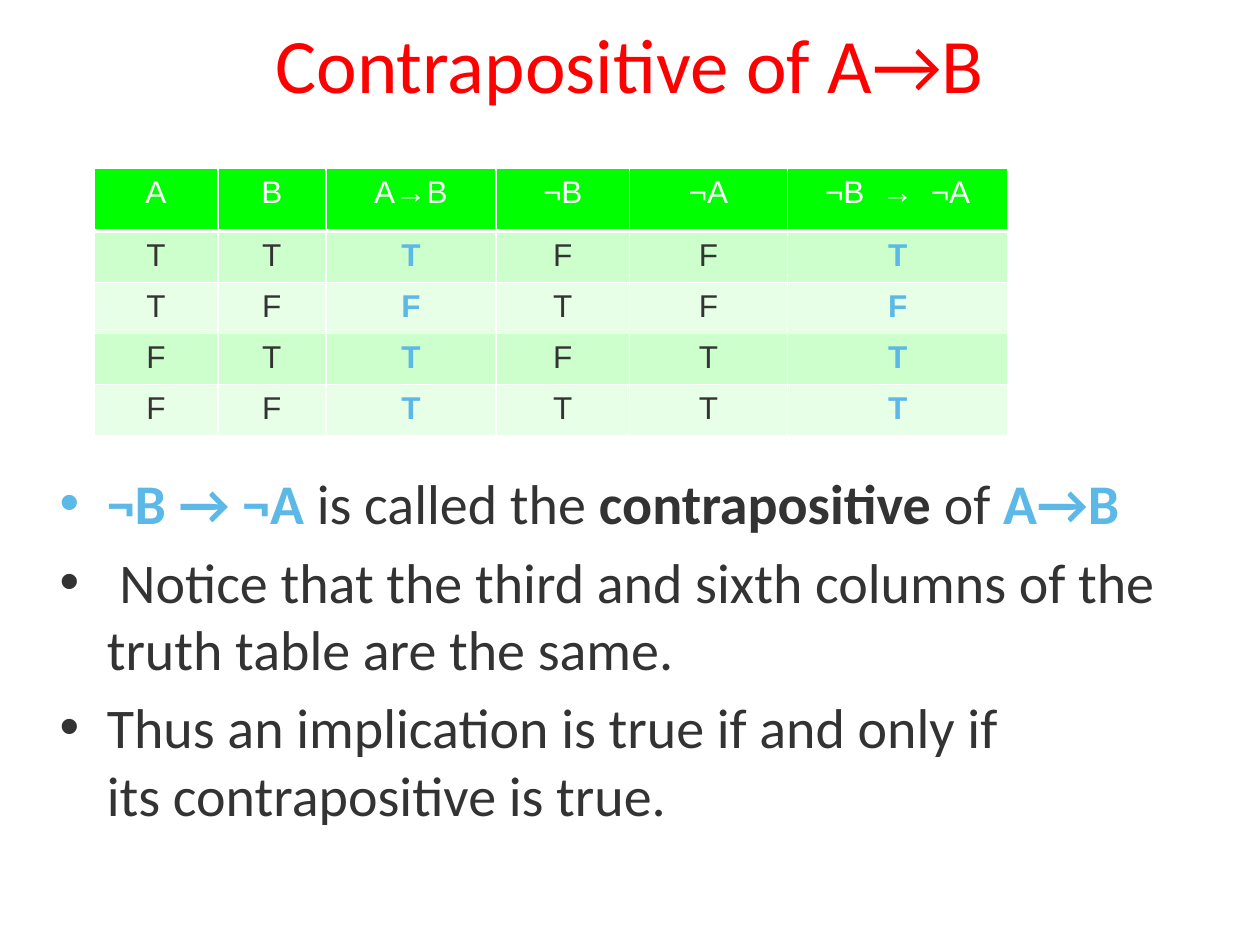
from lxml import etree
from pptx import Presentation
from pptx import util as u
from pptx.dml.color import RGBColor
from pptx.enum import text
from pptx.oxml import ns

DARK, BLUE, WHITE = "333333", "5CB9E7", "FFFFFF"
HEADER_FILL, BAND_FILLS = "00FF00", ("CCFFCC", "E7FFE7")
COLUMN_WIDTHS = (2.49, 2.18, 3.43, 2.69, 3.18, 4.45)
ROW_HEIGHTS = (1.27, 1.03, 1.03, 1.03, 1.03)
RESULT_COLUMNS = (2, 5)
TRUTH_TABLE = (
    ("A", "B", "A→B", "¬B", "¬A", "¬B  →  ¬A"),
    "TTTFFT",
    "TFFTFF",
    "FTTFTT",
    "FFTTTT",
)
BULLETS = (
    (
        ("¬B → ¬A ", BLUE, True),
        ("is called the ", DARK, False),
        ("contrapositive", DARK, True),
        (" of ", DARK, False),
        ("A→B", BLUE, True),
    ),
    ((" Notice that the third and sixth columns of the truth table are the same.", DARK, False),),
    (("Thus an implication is true if and only if \nits contrapositive is true.", DARK, False),),
)


def color(value):
    """Turn a hex string into a colour."""
    return RGBColor.from_string(value)


def add_text(paragraph, content, size=18, font="Arial", fill=DARK, bold=False):
    """Add formatted text, with a line break at each newline."""
    for index, line in enumerate(content.split("\n")):
        if index:
            paragraph.add_line_break()
        run = paragraph.add_run()
        run.text = line
        run.font.size = u.Pt(size)
        run.font.name = font
        run.font.bold = bold
        run.font.color.rgb = color(fill)


def place(shape, left, top, width, height):
    """Move and size a shape, in centimetres."""
    shape.left, shape.top = u.Cm(left), u.Cm(top)
    shape.width, shape.height = u.Cm(width), u.Cm(height)


def set_border(cell, side, width):
    """Give one side of a cell a white line."""
    properties = cell._tc.get_or_add_tcPr()
    line = etree.SubElement(properties, ns.qn(f"a:ln{side}"), w=str(u.Pt(width)))
    fill = etree.SubElement(line, ns.qn("a:solidFill"))
    etree.SubElement(fill, ns.qn("a:srgbClr"), val=WHITE)


def format_cell(cell, content, row, column):
    """Write and style one cell of the truth table."""
    header, result = row == 0, row > 0 and column in RESULT_COLUMNS
    widths = {"L": 1, "R": 1, "T": 3 if row == 1 else 1, "B": 3 if header else 1}
    for side, width in widths.items():
        set_border(cell, side, width)
    cell.fill.solid()
    cell.fill.fore_color.rgb = color(HEADER_FILL if header else BAND_FILLS[(row - 1) % 2])
    paragraph = cell.text_frame.paragraphs[0]
    paragraph.alignment = text.PP_ALIGN.CENTER
    add_text(paragraph, content, fill=WHITE if header else BLUE if result else DARK, bold=result)


def add_truth_table(slide):
    """Add the truth table."""
    table = slide.shapes.add_table(
        len(ROW_HEIGHTS), len(COLUMN_WIDTHS), u.Cm(1.9), u.Cm(3.39),
        u.Cm(sum(COLUMN_WIDTHS)), u.Cm(sum(ROW_HEIGHTS)),
    ).table
    for column, width in zip(table.columns, COLUMN_WIDTHS):
        column.width = u.Cm(width)
    for row, height in zip(table.rows, ROW_HEIGHTS):
        row.height = u.Cm(height)
    for row, values in enumerate(TRUTH_TABLE):
        for column, value in enumerate(values):
            format_cell(table.cell(row, column), value, row, column)


def fill_title(title):
    """Place and write the title."""
    place(title, 1.27, 0, 22.86, 2.54)
    title.text_frame.auto_size = text.MSO_AUTO_SIZE.NONE
    add_text(title.text_frame.paragraphs[0], "Contrapositive of A→B", size=44, font="Calibri", fill="FF0000")


def fill_body(body):
    """Place and write the bullet list."""
    place(body, 1.07, 9.32, 22.86, 8.69)
    frame = body.text_frame
    frame.auto_size = text.MSO_AUTO_SIZE.NONE
    frame.margin_left = frame.margin_top = u.Cm(0.13)
    frame.margin_right = frame.margin_bottom = u.Cm(0.05)
    for index, runs in enumerate(BULLETS):
        paragraph = frame.add_paragraph() if index else frame.paragraphs[0]
        paragraph.space_before = u.Pt(6.4 if index else 0)
        for content, fill, bold in runs:
            add_text(paragraph, content, size=32, font="Calibri", fill=fill, bold=bold)


def main():
    """Build and save the slide."""
    presentation = Presentation()
    presentation.slide_width, presentation.slide_height = u.Cm(25.4), u.Cm(19.05)
    slide = presentation.slides.add_slide(presentation.slide_layouts[1])
    fill_body(slide.placeholders[1])
    fill_title(slide.shapes.title)
    add_truth_table(slide)
    presentation.save("out.pptx")


if __name__ == "__main__":
    main()
